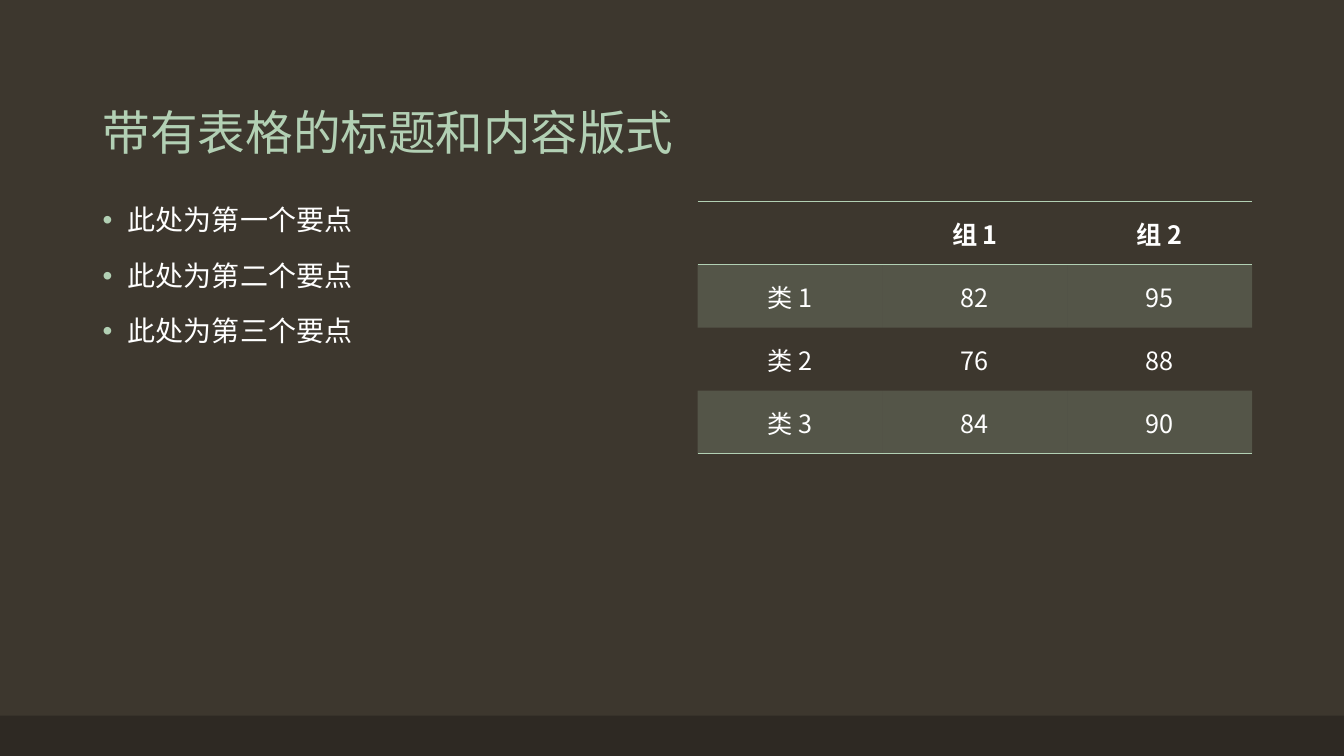
from lxml import etree
from pptx import Presentation
from pptx.dml.color import RGBColor
from pptx.enum import shapes, text
from pptx.oxml.ns import qn
from pptx.util import Inches, Pt

# Content
TITLE = "带有表格的标题和内容版式"
POINTS = ["此处为第一个要点", "此处为第二个要点", "此处为第三个要点"]
ROWS = [
    ["", "组 1", "组 2"],
    ["类 1", "82", "95"],
    ["类 2", "76", "88"],
    ["类 3", "84", "90"],
]

# Style
COLORS = {"background": "3D372E", "footer": "2E2923", "accent": "B2D0B4", "text": "FFFFFF"}
SERIF, SANS = "TeX Gyre Schola", "Noto Sans CJK SC"
WIDTH, HEIGHT = 13.33, 7.5
LEFT, CONTENT_TOP, FOOTER_HEIGHT = 0.92, 2, 0.4
TABLE_LEFT, COLUMN_WIDTH, ROW_HEIGHT = 6.92, 5.5 / 3, 0.625
NO_STYLE = "{2D5ABB26-0587-4C30-8999-92F81FD0307C}"


def color(name):
    return RGBColor.from_string(COLORS[name])


def fill_solid(fill, name):
    fill.solid()
    fill.fore_color.rgb = color(name)


def format_paragraph(paragraph, size, color_name, latin, bold=False):
    font = paragraph.font
    font.size, font.bold, font.name = Pt(size), bold, latin
    font.color.rgb = color(color_name)
    properties = paragraph._p.get_or_add_pPr().find(qn("a:defRPr"))
    etree.SubElement(properties, qn("a:ea"), typeface=SANS)


def add_bullet(paragraph):
    properties = paragraph._p.get_or_add_pPr()
    properties.set("marL", str(Inches(0.25)))
    properties.set("indent", str(-Inches(0.25)))
    bullet_color = etree.Element(qn("a:buClr"))
    etree.SubElement(bullet_color, qn("a:srgbClr"), val=COLORS["accent"])
    bullet_font = etree.Element(qn("a:buFont"), typeface="Arial")
    bullet = etree.Element(qn("a:buChar"), char="•")
    default_font = properties.find(qn("a:defRPr"))
    for element in (bullet_color, bullet_font, bullet):
        default_font.addprevious(element)


def set_borders(cell, sides):
    properties = cell._tc.get_or_add_tcPr()
    for position, side in enumerate(sides):
        line = etree.Element(qn("a:ln" + side), w=str(Pt(1)))
        solid = etree.SubElement(line, qn("a:solidFill"))
        etree.SubElement(solid, qn("a:srgbClr"), val=COLORS["accent"])
        properties.insert(position, line)


# Slide and footer band
presentation = Presentation()
presentation.slide_width, presentation.slide_height = Inches(WIDTH), Inches(HEIGHT)
slide = presentation.slides.add_slide(presentation.slide_layouts[5])
fill_solid(slide.background.fill, "background")
footer = slide.shapes.add_shape(
    shapes.MSO_SHAPE.RECTANGLE, 0, Inches(HEIGHT - FOOTER_HEIGHT),
    Inches(WIDTH), Inches(FOOTER_HEIGHT))
footer.shadow.inherit = False
fill_solid(footer.fill, "footer")
footer.line.fill.background()

# Title
title = slide.shapes.title
title.left, title.top = Inches(LEFT), Inches(0.4)
title.width, title.height = Inches(11.5), Inches(1.25)
title.text_frame.text = TITLE
title.text_frame.vertical_anchor = text.MSO_ANCHOR.BOTTOM
title_paragraph = title.text_frame.paragraphs[0]
title_paragraph.alignment = text.PP_ALIGN.LEFT
title_paragraph.line_spacing = 0.9
format_paragraph(title_paragraph, 34, "accent", SERIF)

# Bullet points
body = slide.shapes.add_textbox(Inches(LEFT), Inches(CONTENT_TOP), Inches(5.5), Inches(4.76))
body.text_frame.word_wrap = True
body.text_frame.text = "\n".join(POINTS)
for paragraph in body.text_frame.paragraphs:
    paragraph.line_spacing = 0.9
    paragraph.space_before = Pt(18)
    format_paragraph(paragraph, 20, "text", SERIF)
    add_bullet(paragraph)

# Table
row_count, column_count = len(ROWS), len(ROWS[0])
table = slide.shapes.add_table(
    row_count, column_count, Inches(TABLE_LEFT), Inches(CONTENT_TOP),
    Inches(COLUMN_WIDTH * column_count), Inches(ROW_HEIGHT * row_count)).table
table._tbl.tblPr.find(qn("a:tableStyleId")).text = NO_STYLE
for row_index, row in enumerate(ROWS):
    for column_index, value in enumerate(row):
        cell = table.cell(row_index, column_index)
        cell.text = value
        cell.vertical_anchor = text.MSO_ANCHOR.MIDDLE
        paragraph = cell.text_frame.paragraphs[0]
        paragraph.alignment = text.PP_ALIGN.CENTER
        format_paragraph(paragraph, 18, "text", SANS, bold=row_index == 0)
        if row_index % 2:
            fill_solid(cell.fill, "accent")
            band_color = cell._tc.tcPr.find(".//" + qn("a:srgbClr"))
            etree.SubElement(band_color, qn("a:alpha"), val="20000")
        else:
            cell.fill.background()
        if row_index == 0:
            set_borders(cell, "TB")
        elif row_index == row_count - 1:
            set_borders(cell, "B")

presentation.save("out.pptx")
